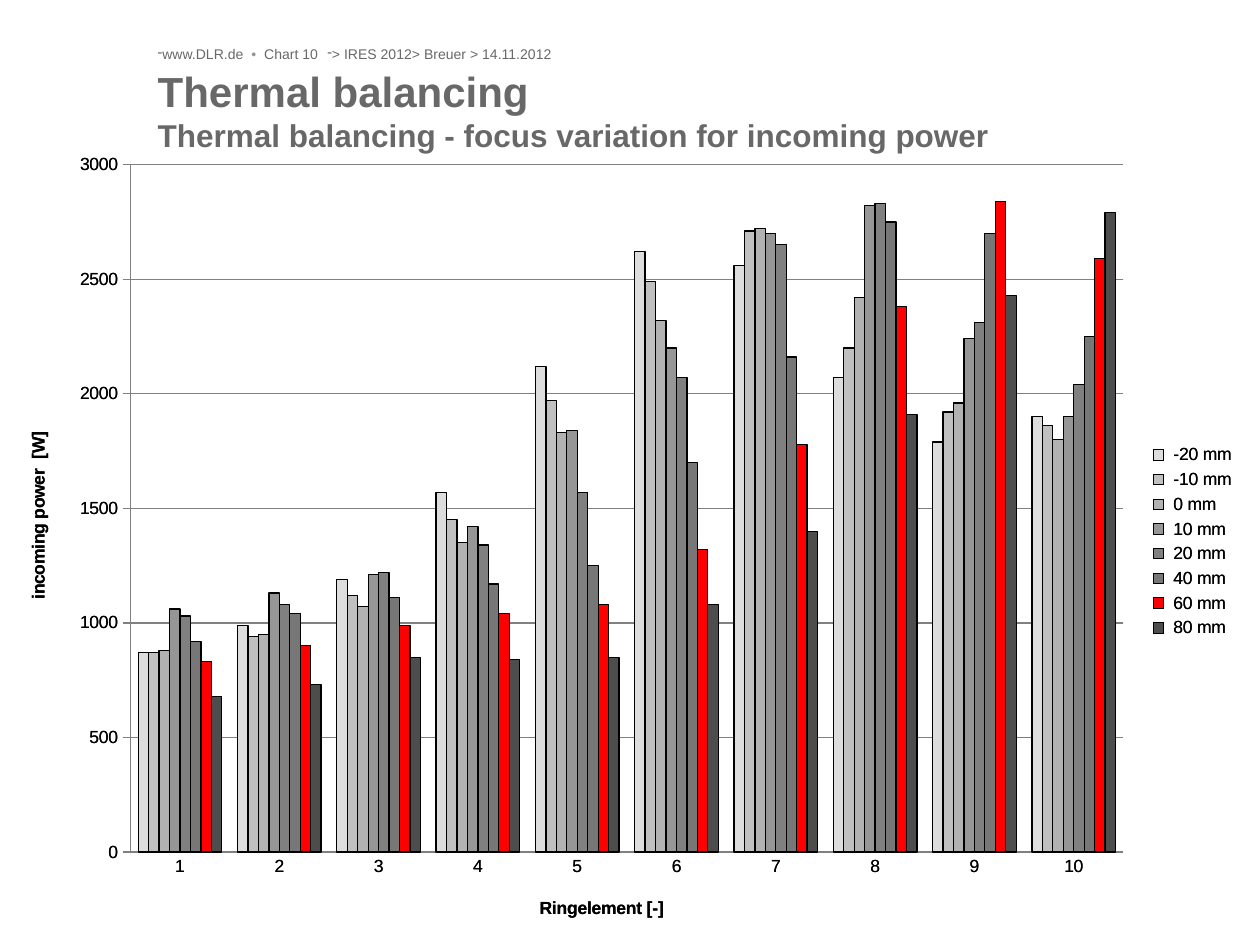
from dataclasses import dataclass

from lxml.etree import SubElement
from pptx import Presentation
from pptx.chart.data import CategoryChartData
from pptx.dml.color import RGBColor
from pptx.enum.chart import XL_CHART_TYPE, XL_LEGEND_POSITION, XL_TICK_MARK
from pptx.enum.text import MSO_ANCHOR
from pptx.oxml import parse_xml
from pptx.oxml.ns import nsdecls, qn
from pptx.util import Cm, Pt


@dataclass(frozen=True)
class Theme:
    font: str = "Arial"
    ink: str = "000000"
    text: str = "686868"
    bullet: str = "949494"
    grid: str = "808080"
    paper: str = "FFFFFF"
    muted: str = "5F5F5F"
    highlight: str = "FF0000"
    header: float = 8
    title: float = 24
    subtitle: float = 18
    chart: float = 10


@dataclass(frozen=True)
class Box:
    left: float
    top: float
    width: float
    height: float

    def lengths(self):
        return [Cm(value) for value in (self.left, self.top, self.width, self.height)]


THEME = Theme()
HIGHLIGHT_FOCUS = 60
FOCUS_SERIES = [
    (-20, "DDDDDD", (870, 990, 1190, 1570, 2120, 2620, 2560, 2070, 1790, 1900)),
    (-10, "C0C0C0", (870, 940, 1120, 1450, 1970, 2490, 2710, 2200, 1920, 1860)),
    (0, "B2B2B2", (880, 950, 1070, 1350, 1830, 2320, 2720, 2420, 1960, 1800)),
    (10, "969696", (1060, 1130, 1210, 1420, 1840, 2200, 2700, 2820, 2240, 1900)),
    (20, "808080", (1030, 1080, 1220, 1340, 1570, 2070, 2650, 2830, 2310, 2040)),
    (40, "777777", (920, 1040, 1110, 1170, 1250, 1700, 2160, 2750, 2700, 2250)),
    (60, THEME.muted, (830, 900, 990, 1040, 1080, 1320, 1780, 2380, 2840, 2590)),
    (80, "4D4D4D", (680, 730, 850, 840, 850, 1080, 1400, 1910, 2430, 2790)),
]


def set_attributes(target, **values):
    for name, value in values.items():
        setattr(target, name, value)


def style_font(font, size, color, bold=False):
    set_attributes(font, name=THEME.font, size=Pt(size), bold=bold)
    font.color.rgb = RGBColor.from_string(color)


def style_line(line, color, width=0.75):
    line.color.rgb = RGBColor.from_string(color)
    line.width = Pt(width)


def add_text(page, box, paragraphs, anchor=MSO_ANCHOR.TOP, bullet=None):
    frame = page.shapes.add_textbox(*box.lengths()).text_frame
    set_attributes(frame, word_wrap=True, vertical_anchor=anchor, margin_left=0,
                   margin_top=0, margin_right=0, margin_bottom=0)
    for index, spans in enumerate(paragraphs):
        para = frame.add_paragraph() if index else frame.paragraphs[0]
        if bullet:
            SubElement(para._p.get_or_add_pPr(), qn("a:buChar"), char=bullet)
        for text, size, color, bold in spans:
            span = para.add_run()
            span.text = text
            style_font(span.font, size, color, bold)


def add_header(page, box):
    size, color = THEME.header, THEME.text
    split = 3.42
    address = [("www.DLR.de  ", size, color, False), ("•", size, THEME.bullet, False),
               ("  Chart 10", size, color, False)]
    event = [("> IRES 2012> Breuer > 14.11.2012", size, color, False)]
    left_box = Box(box.left, box.top, split, box.height)
    right_box = Box(box.left + split, box.top, box.width - split, box.height)
    for part, spans in ((left_box, address), (right_box, event)):
        add_text(page, part, [spans], MSO_ANCHOR.BOTTOM, "-")


def add_titles(page, box):
    add_text(page, box, [
        [("Thermal balancing", THEME.title, THEME.text, True)],
        [("Thermal balancing - focus variation for incoming power",
          THEME.subtitle, THEME.text, True)],
    ])


def place_part(element, index, inner=False, **percentages):
    for old in element.findall(qn("c:layout")):
        element.remove(old)
    layout = parse_xml(f"<c:layout {nsdecls('c')}><c:manualLayout/></c:layout>")
    settings = {"layoutTarget": "inner"} if inner else {}
    settings.update({f"{name}Mode": "edge" for name in ("x", "y")})
    settings.update({name: value / 100 for name, value in percentages.items()})
    for name, value in settings.items():
        SubElement(layout[0], qn(f"c:{name}"), val=str(value))
    element.insert(index, layout)


def style_axis(axis, title, x, y, tick):
    set_attributes(axis, major_tick_mark=tick, minor_tick_mark=XL_TICK_MARK.NONE)
    style_font(axis.tick_labels.font, THEME.chart, THEME.ink)
    style_line(axis.format.line, THEME.grid)
    frame = axis.axis_title.text_frame
    frame.text = title
    style_font(frame.paragraphs[0].runs[0].font, THEME.chart, THEME.ink, True)
    place_part(axis.axis_title._element, 1, x=x, y=y)


def add_power_chart(page, box, highlight):
    data = CategoryChartData(number_format="0")
    data.categories = [str(ring) for ring in range(1, 11)]
    for focus, _, powers in FOCUS_SERIES:
        data.add_series(f" {focus} mm", powers)
    chart = page.shapes.add_chart(
        XL_CHART_TYPE.COLUMN_CLUSTERED, *box.lengths(), data).chart
    set_attributes(chart, has_title=False, has_legend=True)
    style_font(chart.font, THEME.chart, THEME.ink)
    set_attributes(chart.legend, position=XL_LEGEND_POSITION.RIGHT, include_in_layout=False)
    style_font(chart.legend.font, THEME.chart, THEME.ink)

    plot = chart.plots[0]
    set_attributes(plot, gap_width=150, overlap=0, vary_by_categories=False)
    for series, (focus, shade, _) in zip(plot.series, FOCUS_SERIES):
        color = highlight if focus == HIGHLIGHT_FOCUS else shade
        series.format.fill.solid()
        series.format.fill.fore_color.rgb = RGBColor.from_string(color)
        style_line(series.format.line, THEME.ink)

    style_axis(chart.category_axis, "Ringelement [-]", 43, 93.7, XL_TICK_MARK.NONE)
    power_axis = chart.value_axis
    set_attributes(power_axis, minimum_scale=0, maximum_scale=3000, major_unit=500,
                   has_major_gridlines=True)
    set_attributes(power_axis.tick_labels, number_format="0", number_format_is_linked=False)
    style_axis(power_axis, "incoming power  [W]", 1.9, 36, XL_TICK_MARK.OUTSIDE)
    style_line(power_axis.major_gridlines.format.line, THEME.grid)

    area = chart._chartSpace.chart.plotArea
    place_part(area, 0, inner=True, x=10.45, y=3.2, w=79.6, h=85.4)
    area.append(parse_xml(
        f'<c:spPr {nsdecls("c", "a")}><a:solidFill><a:srgbClr val="{THEME.paper}"/>'
        "</a:solidFill></c:spPr>"))


def main():
    deck = Presentation()
    set_attributes(deck, slide_width=Cm(25.4), slide_height=Cm(19.05))
    page = deck.slides.add_slide(deck.slide_layouts[6])
    add_header(page, Box(3.18, 0.33, 18.41, 0.93))
    add_titles(page, Box(3.18, 1.32, 20.4, 2.06))
    for highlight in (THEME.muted, THEME.highlight):
        add_power_chart(page, Box(0, 2.8, 25.15, 16.23), highlight)
    deck.save("out.pptx")


if __name__ == "__main__":
    main()
